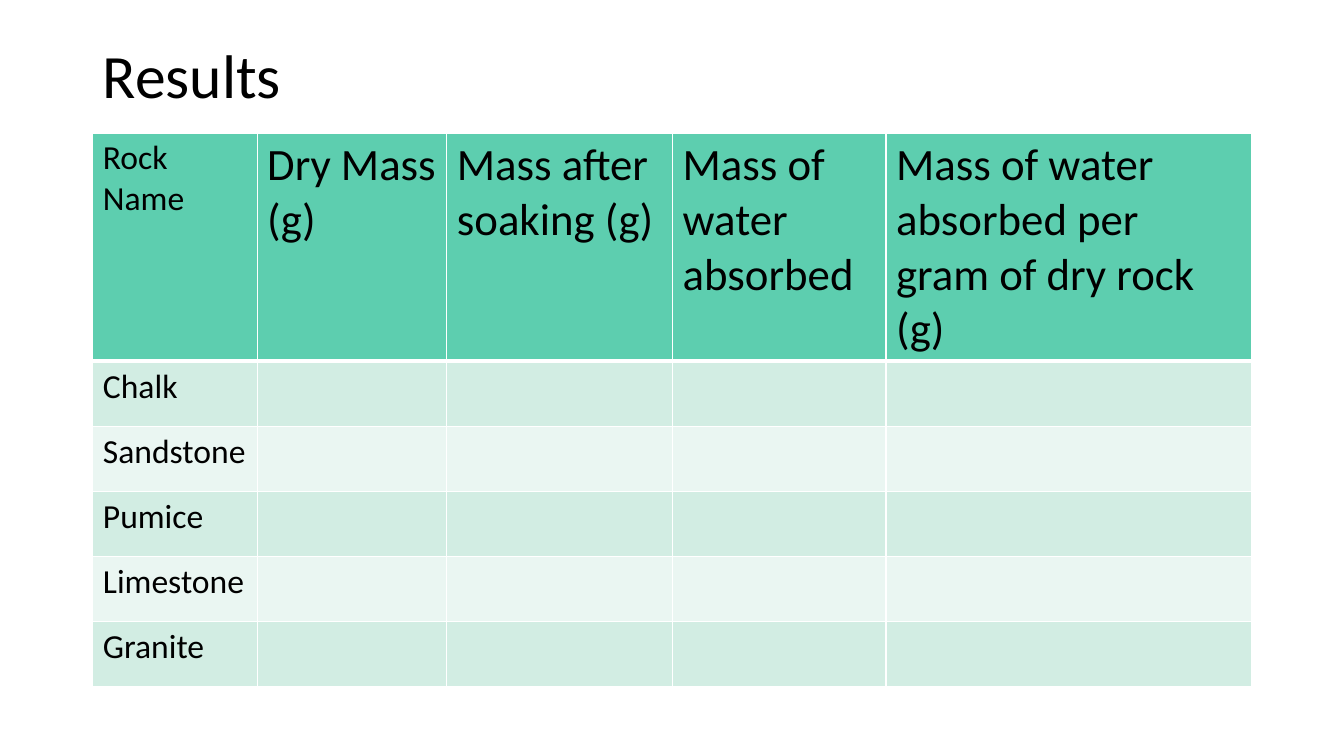
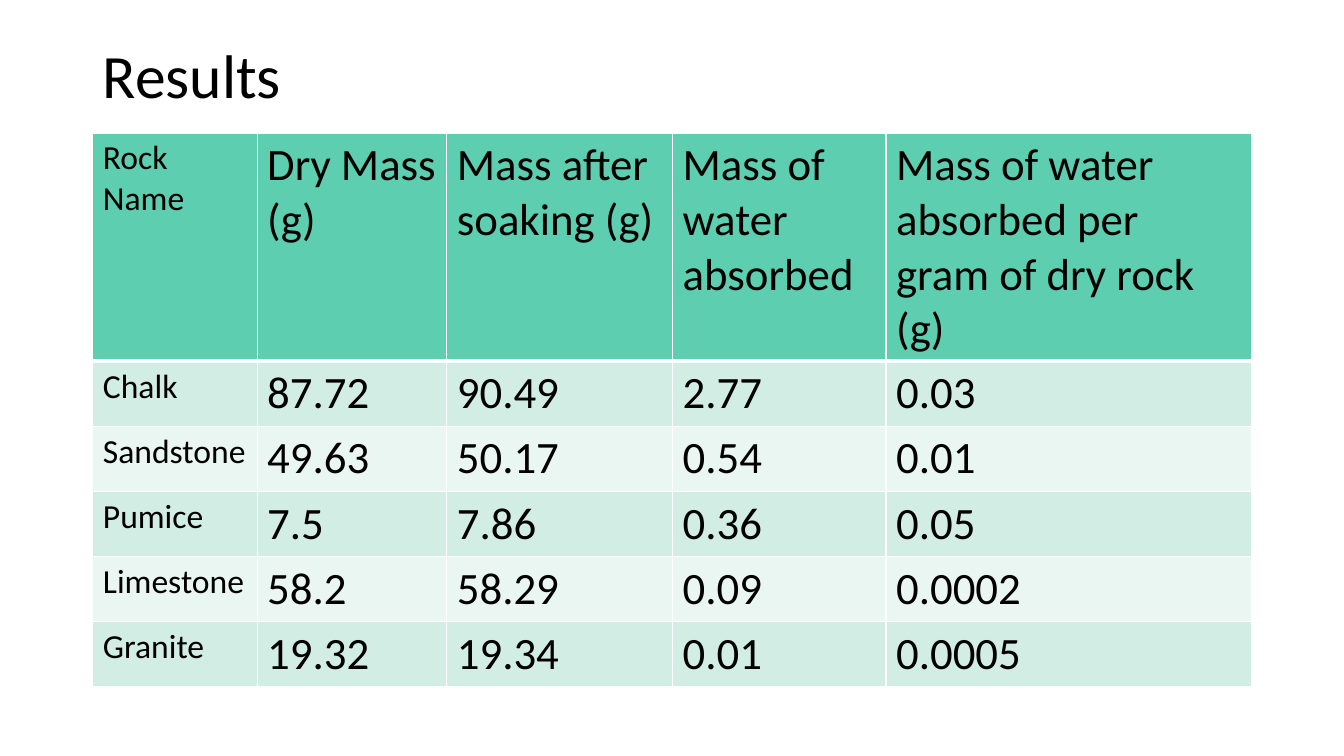
"""Build two results slides: a blank rock absorption table and the completed one."""
from dataclasses import dataclass

from pptx import Presentation
from pptx.dml.color import RGBColor
from pptx.enum import text as t
from pptx.oxml import ns, xmlchemy as x
from pptx.slide import Slide
from pptx.table import _Cell
from pptx.text.text import TextFrame
from pptx.util import Cm, Pt


@dataclass(frozen=True)
class Theme:
    font: str = "Calibri"
    ink: str = "000000"
    header: str = "5DCEAF"
    bands: tuple[str, str] = ("D2EDE3", "EAF6F2")
    rule: str = "FFFFFF"
    title_size: int = 44
    name_size: int = 24
    value_size: int = 32
    thin: int = 1
    thick: int = 3


@dataclass(frozen=True)
class Column:
    heading: str
    width: float


@dataclass(frozen=True)
class Rock:
    name: str
    values: tuple[str, ...]


THEME = Theme()
LEFT, WIDTH = 2.34, 29.21
TABLE_TOP, HEADER_HEIGHT, ROW_HEIGHT = 3.35, 5.75, 1.64

COLUMNS = (
    Column("Rock Name", 4.14),
    Column("Dry Mass (g)", 4.78),
    Column("Mass after soaking (g)", 5.69),
    Column("Mass of water absorbed", 5.38),
    Column("Mass of water absorbed per gram of dry rock (g)", 9.22),
)
ROCKS = (
    Rock("Chalk", ("87.72", "90.49", "2.77", "0.03")),
    Rock("Sandstone", ("49.63", "50.17", "0.54", "0.01")),
    Rock("Pumice", ("7.5", "7.86", "0.36", "0.05")),
    Rock("Limestone", ("58.2", "58.29", "0.09", "0.0002")),
    Rock("Granite", ("19.32", "19.34", "0.01", "0.0005")),
)


def write(tf: TextFrame, text: str, size: int) -> None:
    """Put text in a frame and format its runs."""
    tf.text = text
    for p in tf.paragraphs:
        p.font.size = Pt(size)
        for r in p.runs:
            r.font.name = THEME.font
            r.font.size = Pt(size)
            r.font.color.rgb = RGBColor.from_string(THEME.ink)


def add_title(s: Slide, text: str) -> None:
    """Add the slide title."""
    tf = s.shapes.add_textbox(Cm(LEFT), Cm(0.15), Cm(WIDTH), Cm(3.68)).text_frame
    tf.word_wrap = True
    tf.vertical_anchor = t.MSO_ANCHOR.MIDDLE
    write(tf, text, THEME.title_size)
    tf.paragraphs[0].line_spacing = 0.9


def add_borders(cell: _Cell, top: int, bottom: int) -> None:
    """Rule all four sides of a cell."""
    tc_pr = cell._tc.get_or_add_tcPr()
    sides = {"lnL": THEME.thin, "lnR": THEME.thin, "lnT": top, "lnB": bottom}
    for i, (side, weight) in enumerate(sides.items()):
        ln = x.OxmlElement(f"a:{side}")
        ln.set("w", str(Pt(weight)))
        fill = x.OxmlElement("a:solidFill")
        color = x.OxmlElement("a:srgbClr")
        color.set("val", THEME.rule)
        fill.append(color)
        ln.append(fill)
        tc_pr.insert(i, ln)


def add_results_table(s: Slide, show_values: bool) -> None:
    """Add the rock table, with or without its measurements."""
    blank = ("",) * (len(COLUMNS) - 1)
    rows = [tuple(c.heading for c in COLUMNS)]
    rows += [(k.name, *(k.values if show_values else blank)) for k in ROCKS]
    height = HEADER_HEIGHT + ROW_HEIGHT * len(ROCKS)
    table = s.shapes.add_table(
        len(rows), len(COLUMNS), Cm(LEFT), Cm(TABLE_TOP), Cm(WIDTH), Cm(height)
    ).table
    for column, spec_column in zip(table.columns, COLUMNS):
        column.width = Cm(spec_column.width)
    for i, row in enumerate(rows):
        table.rows[i].height = Cm(ROW_HEIGHT if i else HEADER_HEIGHT)
        color = THEME.bands[(i - 1) % 2] if i else THEME.header
        for j, text in enumerate(row):
            cell = table.cell(i, j)
            write(cell.text_frame, text, THEME.value_size if j else THEME.name_size)
            cell.fill.solid()
            cell.fill.fore_color.rgb = RGBColor.from_string(color)
            add_borders(
                cell,
                top=THEME.thick if i == 1 else THEME.thin,
                bottom=THEME.thin if i else THEME.thick,
            )


def main() -> None:
    """Build and save the presentation."""
    prs = Presentation()
    prs.slide_width, prs.slide_height = Cm(33.87), Cm(19.05)
    for show_values in (False, True):
        s = prs.slides.add_slide(prs.slide_layouts[6])
        add_title(s, "Results")
        add_results_table(s, show_values)
    prs.save("out.pptx")


if __name__ == "__main__":
    main()
